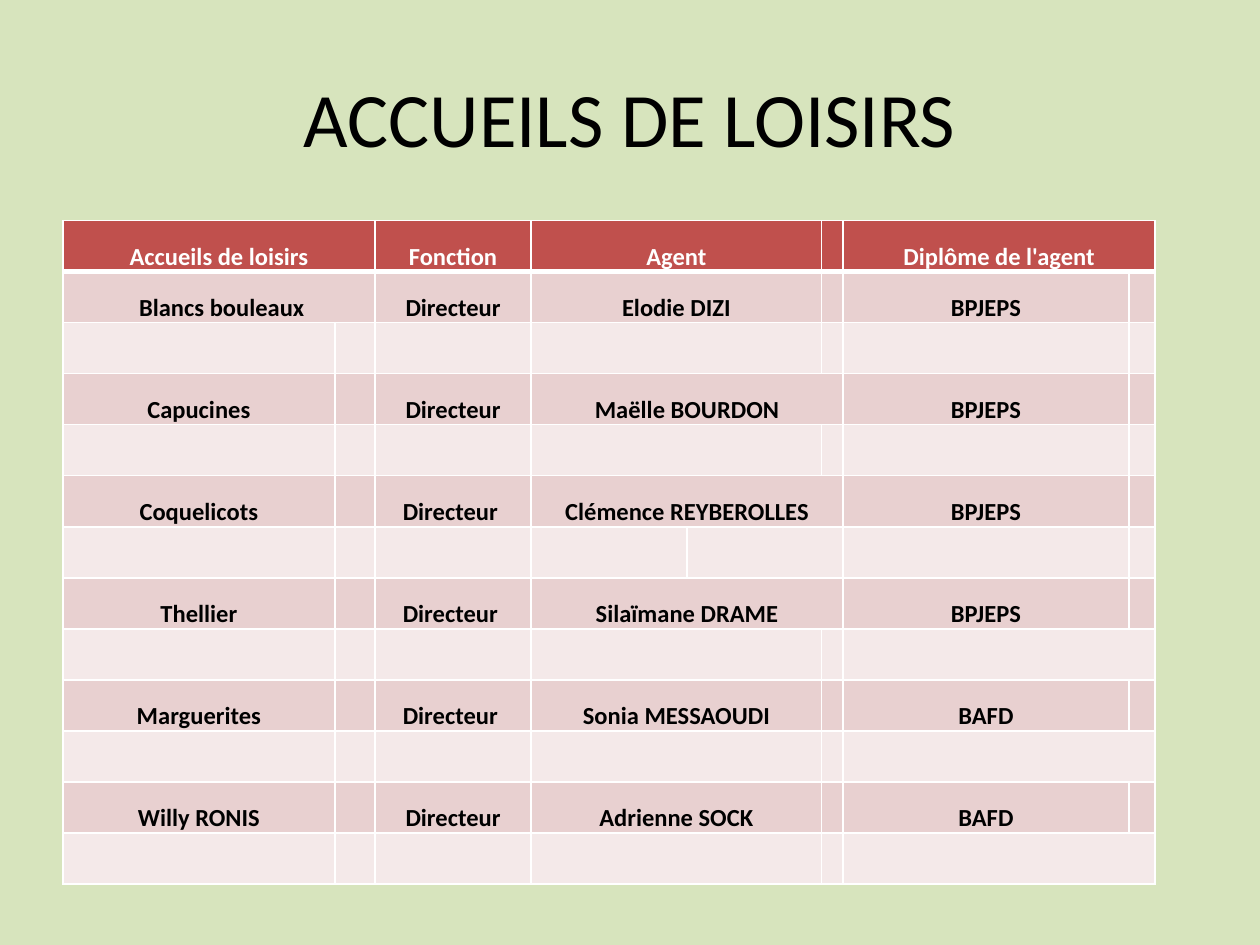
from lxml import etree
from pptx import Presentation
from pptx import util as u
from pptx.dml.color import RGBColor
from pptx.enum import text
from pptx.oxml import ns

BACKGROUND = RGBColor(0xD7, 0xE4, 0xBD)
HEADER = RGBColor(0xC0, 0x50, 0x4D)
BAND_DARK = RGBColor(0xE8, 0xD0, 0xD0)
BAND_LIGHT = RGBColor(0xF4, 0xE9, 0xE9)
WHITE = RGBColor(0xFF, 0xFF, 0xFF)
BLACK = RGBColor(0, 0, 0)
FONT = "Calibri"

COLUMN_WIDTHS = [2.16, 0.32, 1.24, 1.24, 1.07, 0.17, 2.27, 0.21]
TEXT_COLUMNS = [0, 2, 3, 6]
HEADINGS = ["Accueils de loisirs", "Fonction", "Agent", "Diplôme de l'agent"]
CENTRES = [
    [" Blancs bouleaux", "Directeur", "Elodie DIZI", "BPJEPS"],
    ["Capucines", "Directeur", "Maëlle BOURDON", "BPJEPS"],
    ["Coquelicots", "Directeur ", "Clémence REYBEROLLES", "BPJEPS"],
    ["Thellier", "Directeur ", "Silaïmane DRAME", "BPJEPS"],
    ["Marguerites", "Directeur ", "Sonia MESSAOUDI", "BAFD"],
    ["Willy RONIS", "Directeur", "Adrienne SOCK", "BAFD"],
]

# Merged column ranges (first, last) of each row
NAME, AGENT, AGENT_WIDE, AGENT_END, DIPLOMA = (0, 1), (3, 4), (3, 5), (4, 5), (6, 7)
MERGES = [
    [NAME, AGENT, DIPLOMA],
    [NAME, AGENT], [AGENT],
    [AGENT_WIDE], [AGENT],
    [AGENT_WIDE], [AGENT_END],
    [AGENT_WIDE], [AGENT, DIPLOMA],
    [AGENT], [AGENT, DIPLOMA],
    [AGENT], [AGENT, DIPLOMA],
]


def place(shape, left, top, width, height):
    shape.left, shape.top = u.Inches(left), u.Inches(top)
    shape.width, shape.height = u.Inches(width), u.Inches(height)


def set_font(paragraph, size, color, bold=False):
    paragraph.alignment = text.PP_ALIGN.CENTER
    font = paragraph.font
    font.name, font.size, font.bold = FONT, u.Pt(size), bold
    font.color.rgb = color


def set_borders(cell, top, bottom):
    properties = cell._tc.get_or_add_tcPr()
    for side, points in (("L", 1), ("R", 1), ("T", top), ("B", bottom)):
        line = etree.SubElement(properties, ns.qn("a:ln" + side), w=str(u.Pt(points)))
        fill = etree.SubElement(line, ns.qn("a:solidFill"))
        etree.SubElement(fill, ns.qn("a:srgbClr"), val=str(WHITE))


def format_cell(cell, row):
    # A thick rule separates the header from the body
    set_borders(cell, top=3 if row == 1 else 1, bottom=3 if row == 0 else 1)
    cell.fill.solid()
    cell.fill.fore_color.rgb = HEADER if row == 0 else BAND_DARK if row % 2 else BAND_LIGHT
    cell.vertical_anchor = text.MSO_ANCHOR.BOTTOM
    cell.margin_left = cell.margin_right = cell.margin_top = u.Inches(0.01)
    cell.margin_bottom = 0
    set_font(cell.text_frame.paragraphs[0], 14, WHITE if row == 0 else BLACK, bold=True)


def add_title(slide, box):
    title = slide.shapes.title
    place(title, *box)
    title.text_frame.text = "ACCUEILS DE LOISIRS"
    title.text_frame.vertical_anchor = text.MSO_ANCHOR.MIDDLE
    set_font(title.text_frame.paragraphs[0], 44, BLACK)


def add_centres_table(slide, box):
    left, top, width, height = map(u.Inches, box)
    row_count = len(MERGES)
    table = slide.shapes.add_table(
        row_count, len(COLUMN_WIDTHS), left, top, width, height).table
    for column, share in zip(table.columns, COLUMN_WIDTHS):
        column.width = int(width * share / sum(COLUMN_WIDTHS))
    for row in table.rows:
        row.height = height // row_count

    # Text rows: the header, then every other row from the first
    text_rows = {0: HEADINGS}
    text_rows.update((2 * i + 1, centre) for i, centre in enumerate(CENTRES))
    for row, values in text_rows.items():
        for column, value in zip(TEXT_COLUMNS, values):
            table.cell(row, column).text = value

    for row, merges in enumerate(MERGES):
        for column in range(len(COLUMN_WIDTHS)):
            format_cell(table.cell(row, column), row)
        for first, last in merges:
            table.cell(row, first).merge(table.cell(row, last))


def main():
    presentation = Presentation()
    presentation.slide_width, presentation.slide_height = u.Inches(10), u.Inches(7.5)
    slide = presentation.slides.add_slide(presentation.slide_layouts[5])
    slide.background.fill.solid()
    slide.background.fill.fore_color.rgb = BACKGROUND
    add_title(slide, (0.5, 0.3, 9, 1.25))
    add_centres_table(slide, (0.5, 1.75, 8.67, 5.27))
    presentation.save("out.pptx")


if __name__ == "__main__":
    main()
